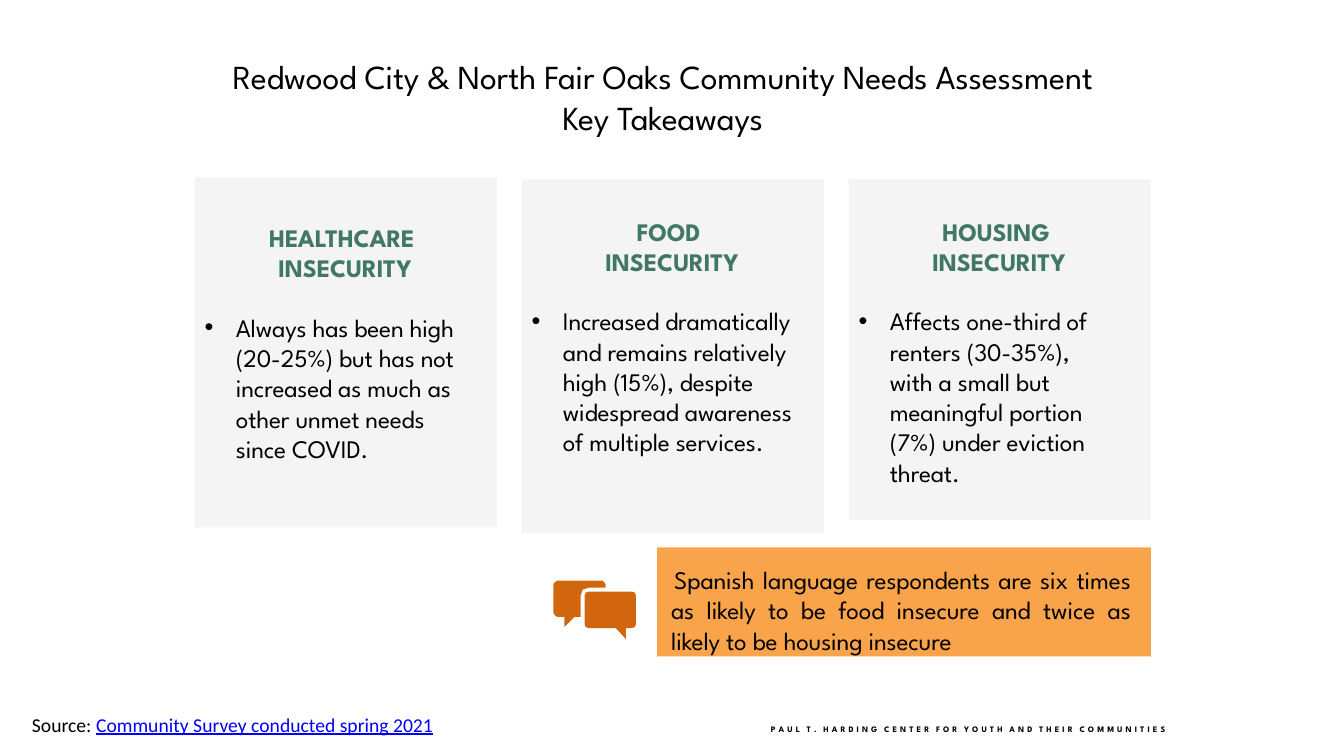
"""Build the key takeaways slide of a community needs assessment."""
from dataclasses import dataclass, field

import pptx
import pptx.dml.color
import pptx.enum.shapes
import pptx.enum.text
import pptx.oxml
import pptx.oxml.ns
import pptx.util

Pt = pptx.util.Pt
RGB = pptx.dml.color.RGBColor
Align = pptx.enum.text.PP_ALIGN

BLACK = RGB(0x00, 0x00, 0x00)
BLUE = RGB(0x00, 0x00, 0xFF)
GREEN = RGB(0x41, 0x78, 0x65)
GREY = RGB(0xF4, 0xF4, 0xF4)
AMBER = RGB(0xF9, 0xA4, 0x4A)
RUST = RGB(0xD1, 0x66, 0x0F)
FACE = "League Spartan"

LEFT, STEP, WIDTH = 139, 233.6, 216
BACK = [
    (432.7, 417.6), (431.3, 415.4), (429.8, 414.7), (398.2, 414.7), (396, 416.2),
    (395.3, 417.6), (395.3, 437.8), (396.7, 439.9), (398.2, 440.6), (403.2, 440.6),
    (403.2, 447.8), (410.4, 440.6), (414.7, 440.6), (414.7, 425.5), (416.2, 421.2),
    (418.3, 420.5), (420.5, 419.8), (432.7, 419.8),
]
FRONT = [
    (454.3, 425.5), (453.6, 423.4), (451.4, 422.6), (420.5, 422.6), (418.3, 423.4),
    (417.6, 425.5), (417.6, 445.7), (418.3, 447.8), (420.5, 448.6), (439.9, 448.6),
    (447.1, 456.5), (447.1, 448.6), (451.4, 448.6), (453.6, 447.8), (454.3, 445.7),
]


@dataclass
class Run:
    """Text with its look."""
    text: str
    size: float = 18
    color: RGB = BLACK
    bold: bool = False
    line: bool = False
    face: str = FACE
    gap: float = -0.1


@dataclass
class Para:
    """Runs that share one set of indents."""
    runs: list[Run]
    left: float = 0
    first: float = 0
    right: float = 0
    above: float = 0
    align: Align = Align.LEFT
    mark: str = ""


@dataclass
class Box:
    """Place of a text, with a fill if it has one."""
    x: float
    y: float
    w: float
    h: float
    paras: list[Para] = field(default_factory=list)
    fill: RGB | None = None
    pads: tuple[float, float] = (0, 0)
    wrap: bool = True


@dataclass
class Card:
    """One need, with its head and its point."""
    head: str
    note: str
    top: float
    high: float
    pad: float
    first: float
    right: float


CARDS = [
    Card("HEALTHCARE INSECURITY",
         "Always has been high (20-25%) but has not increased as much as other "
         "unmet needs since COVID.", 126.7, 250, 32, -6.5, 18),
    Card("FOOD INSECURITY",
         "Increased dramatically and remains relatively high (15%), despite "
         "widespread awareness of multiple services.", 128.2, 252.7, 26, 22.3, 18),
    Card("HOUSING INSECURITY",
         "Affects one-third of renters (30-35%), with a small but meaningful "
         "portion (7%) under eviction threat.", 128.2, 243.4, 26, 7.2, 29),
]


def put(target: object, values: dict) -> None:
    """Set each value on the target."""
    for name, value in values.items():
        setattr(target, name, value)


def tint(shape: object, color: RGB) -> None:
    """Give a shape a flat fill with no line or shadow."""
    shape.shadow.inherit = False
    shape.fill.solid()
    shape.fill.fore_color.rgb = color
    shape.line.fill.background()


def add_run(para: object, run: Run) -> None:
    """Add one run to a paragraph."""
    item = para.add_run()
    item.text = run.text
    put(item.font, {"size": Pt(run.size), "bold": run.bold,
                    "underline": run.line, "name": run.face})
    item.font.color.rgb = run.color
    item._r.get_or_add_rPr().set("spc", str(round(run.gap * 100)))


def add_para(para: object, data: Para) -> None:
    """Fill one paragraph."""
    put(para, {"alignment": data.align, "space_before": Pt(data.above)})
    props = para._p.get_or_add_pPr()
    marks = {"marL": data.left, "marR": data.right, "indent": data.first}
    for name, value in marks.items():
        props.set(name, str(Pt(value)))
    if data.mark:
        tag = pptx.oxml.ns.nsdecls("a")
        props.append(pptx.oxml.parse_xml(f'<a:buFont {tag} typeface="Arial"/>'))
        props.append(pptx.oxml.parse_xml(f'<a:buChar {tag} char="{data.mark}"/>'))
    for run in data.runs:
        add_run(para, run)


def add_box(slide: object, box: Box) -> None:
    """Draw a box and its text."""
    area = [Pt(v) for v in (box.x, box.y, box.w, box.h)]
    if box.fill is None:
        shape = slide.shapes.add_textbox(*area)
    else:
        shape = slide.shapes.add_shape(pptx.enum.shapes.MSO_SHAPE.RECTANGLE, *area)
        tint(shape, box.fill)
    side, top = box.pads
    frame = shape.text_frame
    put(frame, {"margin_left": Pt(side), "margin_right": Pt(side),
                "margin_top": Pt(top), "margin_bottom": 0, "word_wrap": box.wrap,
                "vertical_anchor": pptx.enum.text.MSO_ANCHOR.TOP})
    for i, data in enumerate(box.paras):
        add_para(frame.add_paragraph() if i else frame.paragraphs[0], data)


def add_card(slide: object, card: Card, x: float) -> None:
    """Draw one need card."""
    head = Para([Run(card.head, color=GREEN, bold=True)], 59.8, card.first)
    note = Para([Run(card.note)], 29.5, -22.3, card.right, 21, mark="•")
    add_box(slide, Box(x, card.top, WIDTH, card.high, [head, note], GREY, (0, card.pad)))


def add_chat(slide: object) -> None:
    """Draw the pair of speech bubbles."""
    back, front = ([(Pt(x), Pt(y)) for x, y in side] for side in (BACK, FRONT))
    build = slide.shapes.build_freeform(*back[0], scale=1.0)
    build.add_line_segments(back[1:], close=True)
    build.move_to(*front[0])
    build.add_line_segments(front[1:], close=True)
    tint(build.convert_to_shape(), RUST)


def foot_runs(text: str) -> list[Run]:
    """Space out the letters of each word."""
    runs = []
    for word in text.split():
        runs.append(Run(" ".join(word), 6, bold=True, gap=0.3))
        runs.append(Run(" ", 6, bold=True, gap=2.9))
    return runs[:-1]


def main() -> None:
    """Make and save the slide."""
    deck = pptx.Presentation()
    put(deck, {"slide_width": Pt(960), "slide_height": Pt(540)})
    slide = deck.slides.add_slide(deck.slide_layouts[6])
    for i, card in enumerate(CARDS):
        add_card(slide, card, LEFT + i * STEP)
    quote = Run("Spanish language respondents are six times as likely to be food "
                "insecure and twice as likely to be housing insecure")
    title = ["Redwood City & North Fair Oaks Community Needs Assessment", "Key Takeaways"]
    source = [Run("Source: ", 14, face="Calibri", gap=0),
              Run("Community Survey conducted spring 2021", 14, BLUE,
                  line=True, face="Calibri", gap=0)]
    foot = foot_runs("PAUL T. HARDING CENTER FOR YOUTH AND THEIR COMMUNITIES")
    add_box(slide, Box(469.4, 391, 352.8, 77.8,
                       [Para([quote], 10, 2.2, 14.4, align=Align.JUSTIFY)],
                       AMBER, (0, 12.2)))
    add_chat(slide)
    add_box(slide, Box(550, 516.2, 394.6, 8, [Para(foot, 0.7)], pads=(0, 0.7)))
    add_box(slide, Box(65.5, 36.7, 815.8, 65.5,
                       [Para([Run(t, 24)], align=Align.CENTER) for t in title],
                       pads=(7.2, 3.6)))
    add_box(slide, Box(15.8, 505.4, 306.7, 24.5, [Para(source)],
                       pads=(7.2, 3.6), wrap=False))
    deck.save("out.pptx")


if __name__ == "__main__":
    main()
